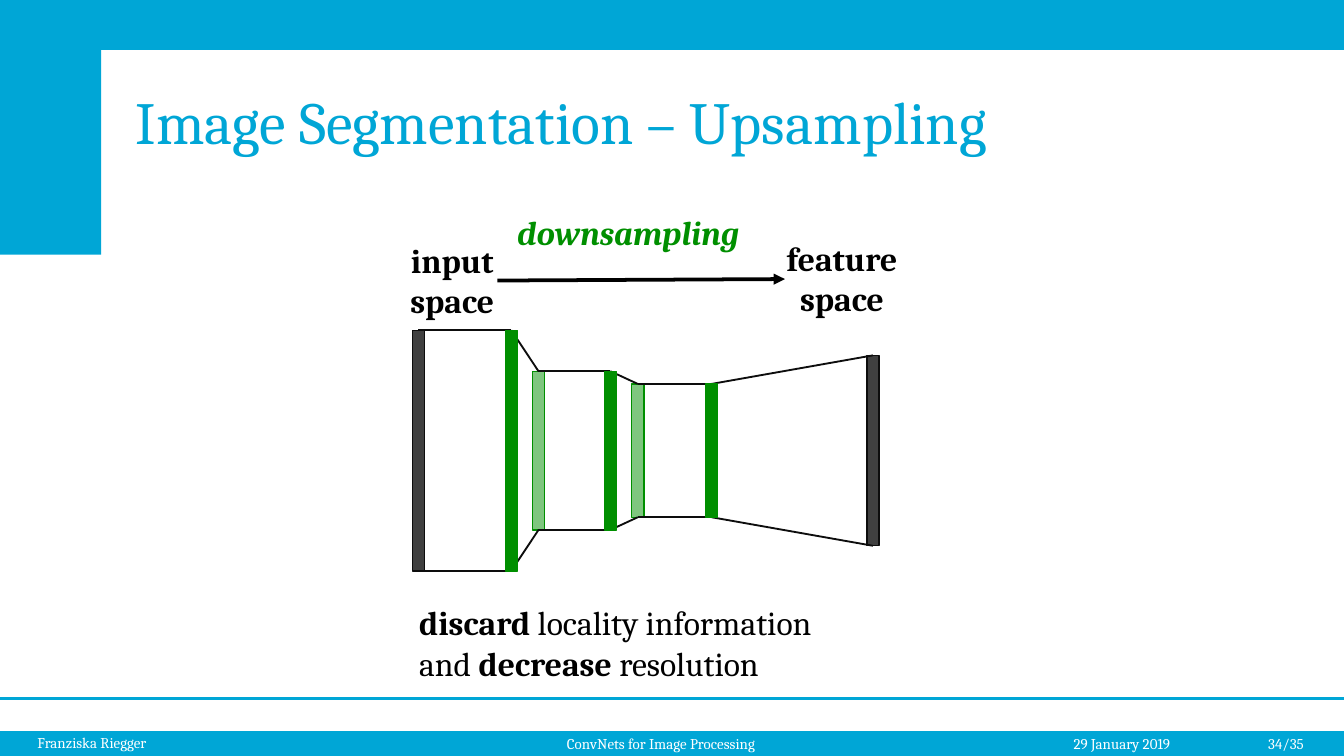
from itertools import pairwise

from lxml.etree import SubElement
from pptx import Presentation
from pptx.dml.color import RGBColor
from pptx.enum.shapes import MSO_CONNECTOR, MSO_SHAPE
from pptx.enum.text import MSO_ANCHOR, PP_ALIGN
from pptx.oxml.ns import qn
from pptx.util import Pt

COLORS = {"cyan": "00A6D6", "white": "FFFFFF", "black": "000000", "green": "008F00",
          "gray": "404040", "outline": "0D0D0D"}
WIDTH, HEIGHT = 720, 405
TITLE = "Image Segmentation – Upsampling"
BANDS = [(0, 391.7, WIDTH, 13.3), (0, 0, WIDTH, 26.8), (0, 0, 54.2, 136.4)]
FOOTERS = [
    ("Franziska Riegger", (13, 389.5, 131.8, 17.3), "left"),
    ("ConvNets for Image Processing", (296.6, 390.2, 126, 17.3), "left"),
    ("29 January 2019", (568.1, 390.2, 87.1, 17.3), "left"),
    ("34/35", (523.4, 390.2, 182.2, 17.3), "right"),
]
BOLD, PLAIN = {"bold": True}, {"bold": False}
SPACES = {
    "input": ([[("input ", BOLD)], [("space", BOLD)]], (218.2, 128.3, 48.2, 44)),
    "feature": ([[("feature ", BOLD)], [("space", BOLD)]], (420.5, 127.5, 61.2, 44)),
}
DOWNSAMPLING = [[("downsampling", {"bold": True, "italic": True})]]
SUMMARY = [[("discard", BOLD), (" locality information and ", PLAIN),
            ("decrease", BOLD), (" resolution", PLAIN)]]
BAR_WIDTH, BAR_MIDDLE = 6.5, 241.4
BARS = [  # center, height, fill, opacity
    (224.2, 129, "gray", 100), (273.9, 129, "green", 100),
    (288.5, 85, "green", 50), (327, 85, "green", 100),
    (341.7, 71.4, "green", 50), (381.2, 71.4, "green", 100),
    (467.7, 102, "gray", 100),
]
BARS = [dict(zip(("center", "height", "fill", "opacity"), bar)) for bar in BARS]


def rgb(name):
    return RGBColor.from_string(COLORS[name])


def add_rectangle(page, frame, fill, outline=None):
    shape = page.shapes.add_shape(MSO_SHAPE.RECTANGLE, *map(Pt, frame))
    shape.shadow.inherit = False
    shape.fill.solid()
    shape.fill.fore_color.rgb = rgb(fill)
    if outline:
        shape.line.color.rgb = rgb(outline)
        shape.line.width = Pt(0.75)
    else:
        shape.line.fill.background()
    return shape


def add_line(page, color, width, start=(0, 0), end=(0, 0)):
    line = page.shapes.add_connector(MSO_CONNECTOR.STRAIGHT, *map(Pt, start + end))
    line.line.color.rgb = rgb(color)
    line.line.width = Pt(width)
    SubElement(line._element.spPr, qn("a:effectLst"))
    return line


def join(line, first, first_site, second, second_site):
    line.begin_connect(first, first_site)
    line.end_connect(second, second_site)


def write(frame, paragraphs, size, color, align="left"):
    for index, spans in enumerate(paragraphs):
        para = frame.add_paragraph() if index else frame.paragraphs[0]
        para.alignment = getattr(PP_ALIGN, align.upper())
        for text, style in spans:
            span = para.add_run()
            span.text = text
            span.font.color.rgb = rgb(color)
            for key, value in {"name": "Cambria", "size": Pt(size), **style}.items():
                setattr(span.font, key, value)


def add_text(page, frame, paragraphs, size, color, align="left", inset=True, wrap=True):
    box = page.shapes.add_textbox(*map(Pt, frame))
    box.text_frame.word_wrap = wrap
    if not inset:
        for side in ("left", "top", "right", "bottom"):
            setattr(box.text_frame, f"margin_{side}", 0)
    write(box.text_frame, paragraphs, size, color, align)
    return box


def add_network(page):
    shapes = []
    for bar in BARS:
        frame = (bar["center"] - BAR_WIDTH / 2, BAR_MIDDLE - bar["height"] / 2,
                 BAR_WIDTH, bar["height"])
        outline = "outline" if bar["fill"] == "gray" else "green"
        shape = add_rectangle(page, frame, bar["fill"], outline)
        if bar["opacity"] < 100:
            color = shape._element.spPr.find(qn("a:solidFill"))[0]
            SubElement(color, qn("a:alpha"), val=str(bar["opacity"] * 1000))
        shapes.append(shape)
    for left, right in pairwise(shapes):
        for site in (0, 2):
            join(add_line(page, "outline", 1), left, site, right, site)
    for bar, shape in zip(BARS, shapes):
        if bar["fill"] == "green" and bar["opacity"] == 100:
            page.shapes._spTree.append(shape._element)


def main():
    """Build the slide on downsampling in image segmentation."""
    deck = Presentation()
    deck.slide_width, deck.slide_height = Pt(WIDTH), Pt(HEIGHT)
    page = deck.slides.add_slide(deck.slide_layouts[5])

    for band in BANDS:
        add_rectangle(page, band, "cyan")
    add_line(page, "cyan", 2, (0, 374.2), (WIDTH, 374.2))
    for text, frame, align in FOOTERS:
        add_text(page, frame, [[(text, {})]], 8, "white", align, wrap=align == "right")

    title = page.shapes.title
    for key, value in zip(("left", "top", "width", "height"), (65.5, 31, 632.9, 67.7)):
        setattr(title, key, Pt(value))
    title.text_frame.vertical_anchor = MSO_ANCHOR.MIDDLE
    write(title.text_frame, [[(TITLE, {})]], 32, "cyan")

    spaces = {name: add_text(page, frame, text, 18, "black", "center", inset=False, wrap=False)
              for name, (text, frame) in SPACES.items()}
    arrow = add_line(page, "black", 2)
    join(arrow, spaces["input"], 3, spaces["feature"], 1)
    SubElement(arrow.line._get_or_add_ln(), qn("a:tailEnd"), type="triangle")
    add_text(page, (270, 110.2, 145.4, 28.8), DOWNSAMPLING, 18, "green")
    add_network(page)
    add_text(page, (224.6, 322.6, 229.7, 44), SUMMARY, 18, "black", inset=False)
    deck.save("out.pptx")


if __name__ == "__main__":
    main()
